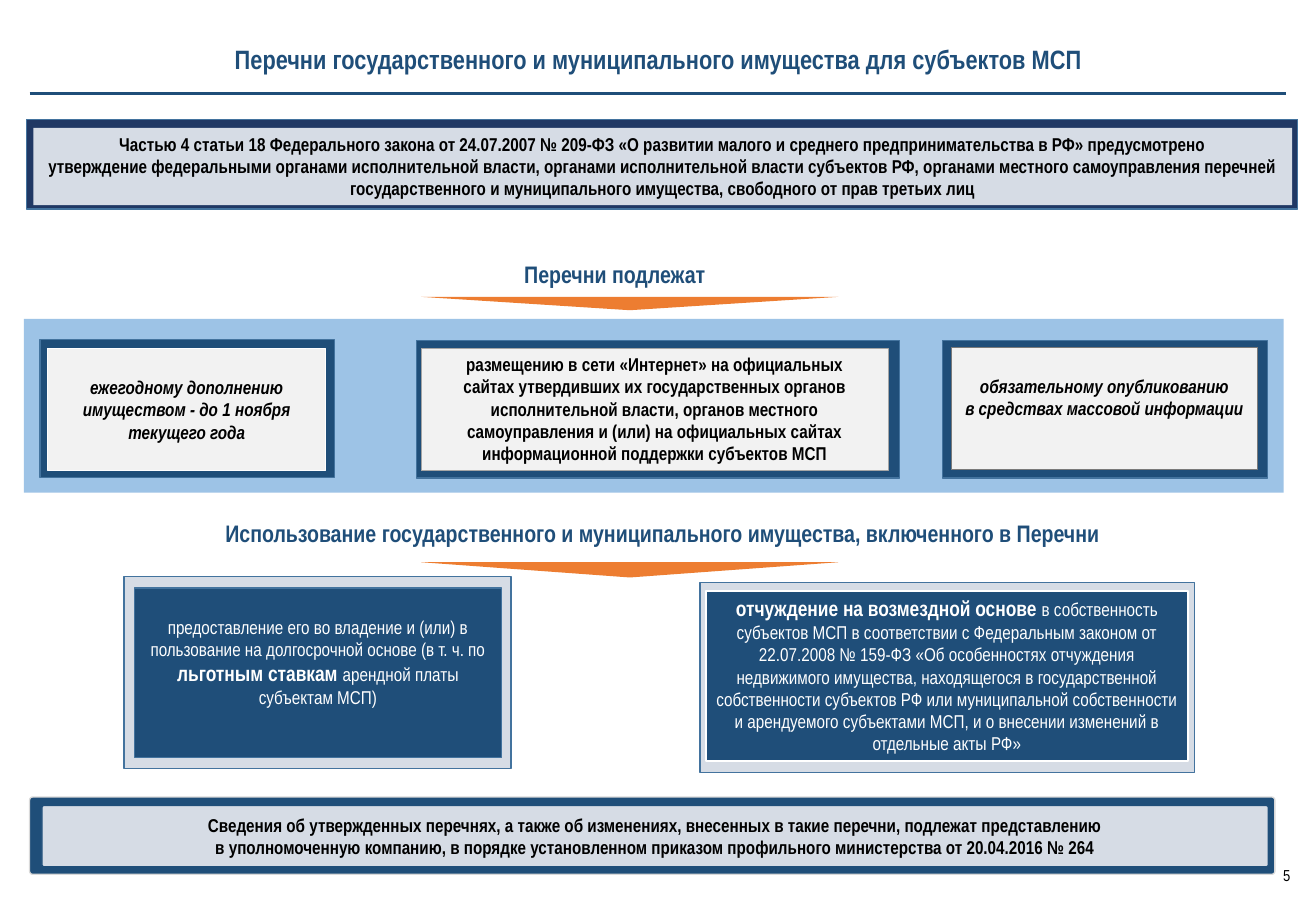
from lxml import etree
from pptx import Presentation
from pptx import util as u
from pptx.dml.color import RGBColor
from pptx.enum import shapes, text
from pptx.oxml.ns import qn

PX = 9144  # EMU in one px, 100 px to the inch
FONT = "Arial Narrow"
INK = {"navy": "1F4E79", "deep": "203864", "edge": "43739E", "mist": "D6DCE5",
       "sky": "9DC3E6", "paper": "F2F2F2", "pale": "D9D9D9", "grey": "A5A5A5",
       "dusk": "7A7A7A", "orange": "ED7D31", "white": "FFFFFF", "black": "000000"}
KIND = shapes.MSO_SHAPE
ALIGN = text.PP_ALIGN
ANCHOR = text.MSO_ANCHOR


def ink(name):
    return RGBColor.from_string(INK[name])


def emu(box):
    return [n * PX for n in box]


def sub(box, dx, dy, wide, high):
    return box[0] + dx, box[1] + dy, wide, high


def plate(slide, box, fill, edge=None, thick=1, kind=KIND.RECTANGLE, bend=None):
    form = slide.shapes.add_shape(kind, *emu(box))
    form.shadow.inherit = False
    form.fill.solid()
    form.fill.fore_color.rgb = ink(fill)
    if edge:
        form.line.color.rgb = ink(edge)
        form.line.width = u.Pt(thick)
    else:
        form.line.fill.background()
    if bend is not None:
        form.adjustments[0] = bend
    return form


def write(form, paras, color, align=ALIGN.CENTER, anchor=ANCHOR.TOP, top=5, side=10):
    """Each paragraph is a list of (words, size, bold, italic)."""
    frame = form.text_frame
    frame.word_wrap = True
    frame.vertical_anchor = anchor
    frame.margin_left = frame.margin_right = side * PX
    frame.margin_top, frame.margin_bottom = top * PX, 5 * PX
    for i, parts in enumerate(paras):
        para = frame.add_paragraph() if i else frame.paragraphs[0]
        para.alignment = align
        for words, size, bold, slant in parts:
            run = para.add_run()
            run.text = words
            font = run.font
            font.name, font.size = FONT, u.Pt(size)
            font.bold, font.italic = bold, slant
            font.color.rgb = ink(color)


def bold(lines, size=14, slant=False):
    return [[(line, size, True, slant)] for line in lines]


def label(slide, box, paras, color="navy", **look):
    form = slide.shapes.add_textbox(*emu(box))
    write(form, paras, color, **look)
    return form


def arrow(slide, box):
    plate(slide, box, "orange", kind=KIND.ISOSCELES_TRIANGLE).rotation = 180


def head(slide, box):
    x, y, wide, high = box
    label(slide, sub(box, 205, 0, 1094, 44),
          bold(["Перечни государственного и муниципального имущества для субъектов МСП"], 20),
          align=ALIGN.LEFT)
    rule = slide.shapes.add_connector(
        shapes.MSO_CONNECTOR.STRAIGHT, *emu((x, y + high, x + wide, y + high)))
    rule.line.color.rgb = ink("navy")
    rule.line.width = u.Pt(1.75)
    etree.SubElement(rule.element.spPr, qn("a:effectLst"))


def law(slide, box):
    plate(slide, box, "deep", "edge")
    write(plate(slide, sub(box, 7, 9, 1318, 81), "mist"), bold([
        "Частью 4 статьи 18 Федерального закона от 24.07.2007 № 209-ФЗ «О развитии малого "
        "и среднего предпринимательства в РФ» предусмотрено",
        "утверждение федеральными органами исполнительной власти, органами исполнительной "
        "власти субъектов РФ, органами местного самоуправления перечней государственного "
        "и муниципального имущества, свободного от прав третьих лиц"]), "black")


def duties(slide, box):
    label(slide, sub(box, 514, 0, 242, 40), bold(["Перечни подлежат"], 18),
          align=ALIGN.LEFT)
    arrow(slide, sub(box, 416, 44, 437, 14))
    plate(slide, sub(box, 0, 67, 1319, 182), "sky",
          kind=KIND.ROUNDED_RECTANGLE, bend=0)
    # outer x, y, width; inner x, y, width; edge, its width; italic, top margin; lines
    cards = [
        (17, 89, 308, 25, 98, 291, "white", 1, True, 29,
         ["ежегодному дополнению имуществом - до 1 ноября", "текущего года"]),
        (411, 90, 506, 416, 98, 489, "grey", 0.5, False, 5,
         ["размещению в сети «Интернет» на официальных",
          "сайтах утвердивших их государственных органов исполнительной власти, органов "
          "местного самоуправления и (или) на официальных сайтах информационной "
          "поддержки субъектов МСП"]),
        (962, 90, 340, 971, 97, 321, "dusk", 1, True, 29,
         ["обязательному опубликованию", "в средствах массовой информации"]),
    ]
    for ox, oy, ow, ix, iy, iw, edge, thick, slant, top, lines in cards:
        plate(slide, sub(box, ox, oy, ow, 144), "navy", "edge")
        card = plate(slide, sub(box, ix, iy, iw, 128), "paper", edge, thick)
        write(card, bold(lines, slant=slant), "black", top=top)


def uses(slide, box):
    label(slide, sub(box, 0, 0, 1300, 40),
          bold(["Использование государственного и муниципального имущества, "
                "включенного в Перечни"], 18),
          anchor=ANCHOR.BOTTOM, top=0, side=0).text_frame.margin_bottom = 0
    arrow(slide, sub(box, 397, 56, 437, 16))
    # outer box; inner box; edge, its width; top margin; runs
    cards = [
        ((86, 71, 405, 201), (97, 83, 384, 178), "edge", 1, 29,
         [("предоставление его во владение и (или) в пользование на долгосрочной основе "
           "(в т. ч. по ", 14, False, False),
          ("льготным ставкам ", 16, True, False),
          ("арендной платы субъектам МСП)", 14, False, False)]),
        ((689, 77, 518, 199), (695, 86, 505, 178), "white", 1.5, 5,
         [("отчуждение на возмездной основе ", 16, True, False),
          ("в собственность субъектов МСП в соответствии с Федеральным законом от "
           "22.07.2008 № 159-ФЗ «Об особенностях отчуждения недвижимого имущества, "
           "находящегося в государственной собственности субъектов РФ или муниципальной "
           "собственности и арендуемого субъектами МСП, и о внесении изменений в "
           "отдельные акты РФ»", 14, False, False)]),
    ]
    for outer, inner, edge, thick, top, parts in cards:
        plate(slide, sub(box, *outer), "mist", "edge")
        card = plate(slide, sub(box, *inner), "navy", edge, thick)
        write(card, [parts], "white", top=top)


def notice(slide, box):
    plate(slide, box, "navy", "pale", kind=KIND.ROUNDED_RECTANGLE, bend=0.04)
    card = plate(slide, sub(box, 13, 9, 1284, 64), "mist", "navy",
                 kind=KIND.ROUNDED_RECTANGLE, bend=0.03)
    write(card, bold([
        "Сведения об утвержденных перечнях, а также об изменениях, внесенных в такие "
        "перечни, подлежат представлению",
        "в уполномоченную компанию, в порядке установленном приказом профильного "
        "министерства от 20.04.2016 № 264"]), "black", anchor=ANCHOR.MIDDLE)


def page(slide, box):
    form = label(slide, box, [[("5", 12, False, False)]], "black", align=ALIGN.RIGHT)
    form.text_frame.paragraphs[0].line_spacing = 0.8


def main():
    deck = Presentation()
    deck.slide_width, deck.slide_height = emu((1378, 945))
    slide = deck.slides.add_slide(deck.slide_layouts[6])
    head(slide, (31, 40, 1316, 58))
    law(slide, (28, 125, 1331, 94))
    duties(slide, (25, 267, 1319, 249))
    uses(slide, (44, 533, 1300, 276))
    notice(slide, (31, 835, 1304, 81))
    page(slide, (1296, 906, 65, 26))
    deck.save("out.pptx")


if __name__ == "__main__":
    main()
